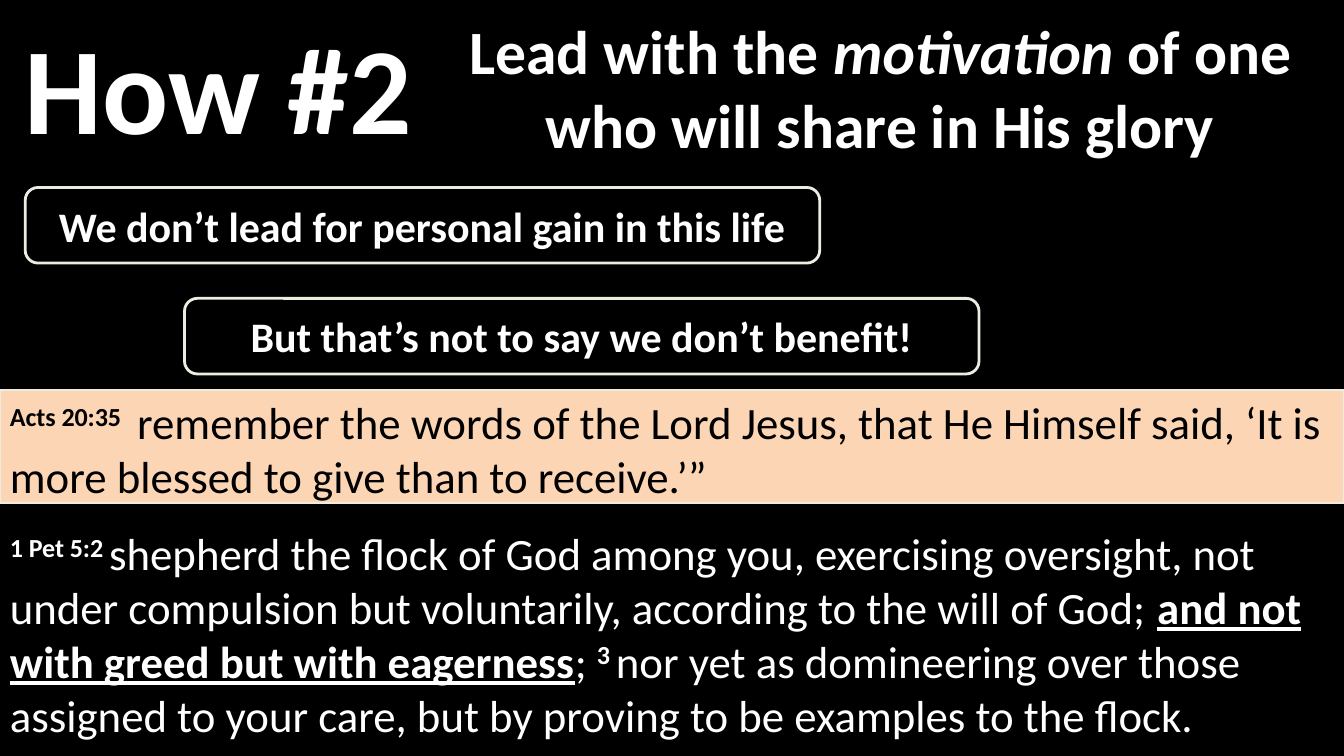
from lxml import etree
from pptx import Presentation
from pptx.dml.color import RGBColor
from pptx.enum.shapes import MSO_SHAPE as SHAPE
from pptx.enum.text import MSO_ANCHOR as ANCHOR, MSO_AUTO_SIZE as AUTO, PP_ALIGN as ALIGN
from pptx.oxml.ns import qn
from pptx.util import Inches, Pt

COLORS = {"black": "000000", "white": "FFFFFF", "cream": "EEECE1", "peach": "FCD5B5"}


def rgb(name):
    """Return a palette colour."""
    return RGBColor.from_string(COLORS[name])


def write(tf, runs, size, color="white", align=ALIGN.LEFT, anchor=ANCHOR.TOP):
    """Fill a frame with (text, style) runs; style letters are b, i, u and ^ for superscript."""
    tf.word_wrap = True
    tf.auto_size = AUTO.NONE
    tf.vertical_anchor = anchor
    p = tf.paragraphs[0]
    p.alignment = align
    for text, style in runs:
        r = p.add_run()
        r.text = text
        f = r.font
        f.name, f.size, f.color.rgb = "Calibri", Pt(size), rgb(color)
        f.bold, f.italic, f.underline = "b" in style, "i" in style, "u" in style
        if "^" in style:
            r._r.get_or_add_rPr().set("baseline", "30000")


def add_title(s, x, y, w, h, text):
    """Place the slide title in its placeholder."""
    sp = s.shapes.title
    sp.left, sp.top, sp.width, sp.height = map(Inches, (x, y, w, h))
    write(sp.text_frame, [(text, "b")], 88, align=ALIGN.CENTER, anchor=ANCHOR.MIDDLE)


def add_callout(s, x, y, w, h, runs, size, framed=True):
    """Add a rounded callout, with or without its outlined panel."""
    sp = s.shapes.add_shape(SHAPE.ROUNDED_RECTANGULAR_CALLOUT, *map(Inches, (x, y, w, h)))
    sp.shadow.inherit = False
    for i, value in enumerate((-0.22, 0.5, 0.17)):
        sp.adjustments[i] = value
    if framed:
        sp.fill.solid()
        sp.fill.fore_color.rgb = rgb("black")
        clr = sp._element.spPr.find(qn("a:solidFill"))[0]
        etree.SubElement(clr, qn("a:alpha")).set("val", "85000")
        sp.line.color.rgb, sp.line.width = rgb("cream"), Pt(2)
    else:
        sp.fill.background()
        sp.line.fill.background()
    write(sp.text_frame, runs, size, align=ALIGN.CENTER, anchor=ANCHOR.MIDDLE)


def add_verse_band(s, x, y, w, h, runs):
    """Add a full-width coloured band holding a verse."""
    sp = s.shapes.add_shape(SHAPE.RECTANGLE, *map(Inches, (x, y, w, h)))
    sp.shadow.inherit = False
    sp.fill.solid()
    sp.fill.fore_color.rgb = rgb("peach")
    sp.line.color.rgb, sp.line.width = rgb("cream"), Pt(1.5)
    write(sp.text_frame, runs, 32, color="black")


def add_passage(s, x, y, w, h, runs):
    """Add a plain passage of scripture."""
    sp = s.shapes.add_textbox(*map(Inches, (x, y, w, h)))
    write(sp.text_frame, runs, 32)


def main():
    """Build and save the slide."""
    prs = Presentation()
    prs.slide_width, prs.slide_height = Inches(13.33), Inches(7.5)
    s = prs.slides.add_slide(prs.slide_layouts[5])
    s.background.fill.solid()
    s.background.fill.fore_color.rgb = rgb("black")

    add_passage(s, 0, 5.17, 13.33, 2.5, [
        ("1 Pet 5:2 ", "b^"),
        ("shepherd the flock of God among you, exercising oversight, not under compulsion "
         "but voluntarily, according to the will of God; ", ""),
        ("and not with greed but with eagerness", "bu"),
        ("; ", ""),
        ("3 ", "b^"),
        ("nor yet as domineering over those assigned to your care, "
         "but by proving to be examples to the flock.", ""),
    ])
    add_title(s, 0, 0.15, 4.33, 1.39, "How #2")
    add_callout(s, 4.33, 0.17, 8.81, 1.39, [
        ("Lead with the ", "b"),
        ("motivation", "bi"),
        (" of one who will share in His glory", "b"),
    ], 44, framed=False)
    points = ["We don’t lead for personal gain in this life",
              "But that’s not to say we don’t benefit!"]
    for i, point in enumerate(points):
        add_callout(s, 0.25 + 1.58 * i, 1.86 + 1.1 * i, 7.88, 0.75, [(point, "b")], 30)
    add_verse_band(s, 0, 3.87, 13.33, 1.12, [
        ("Acts 20:35 ", "b^"),
        (" remember the words of the Lord Jesus, that He Himself said, "
         "‘It is more blessed to give than to receive.’”", ""),
    ])
    prs.save("out.pptx")


if __name__ == "__main__":
    main()
